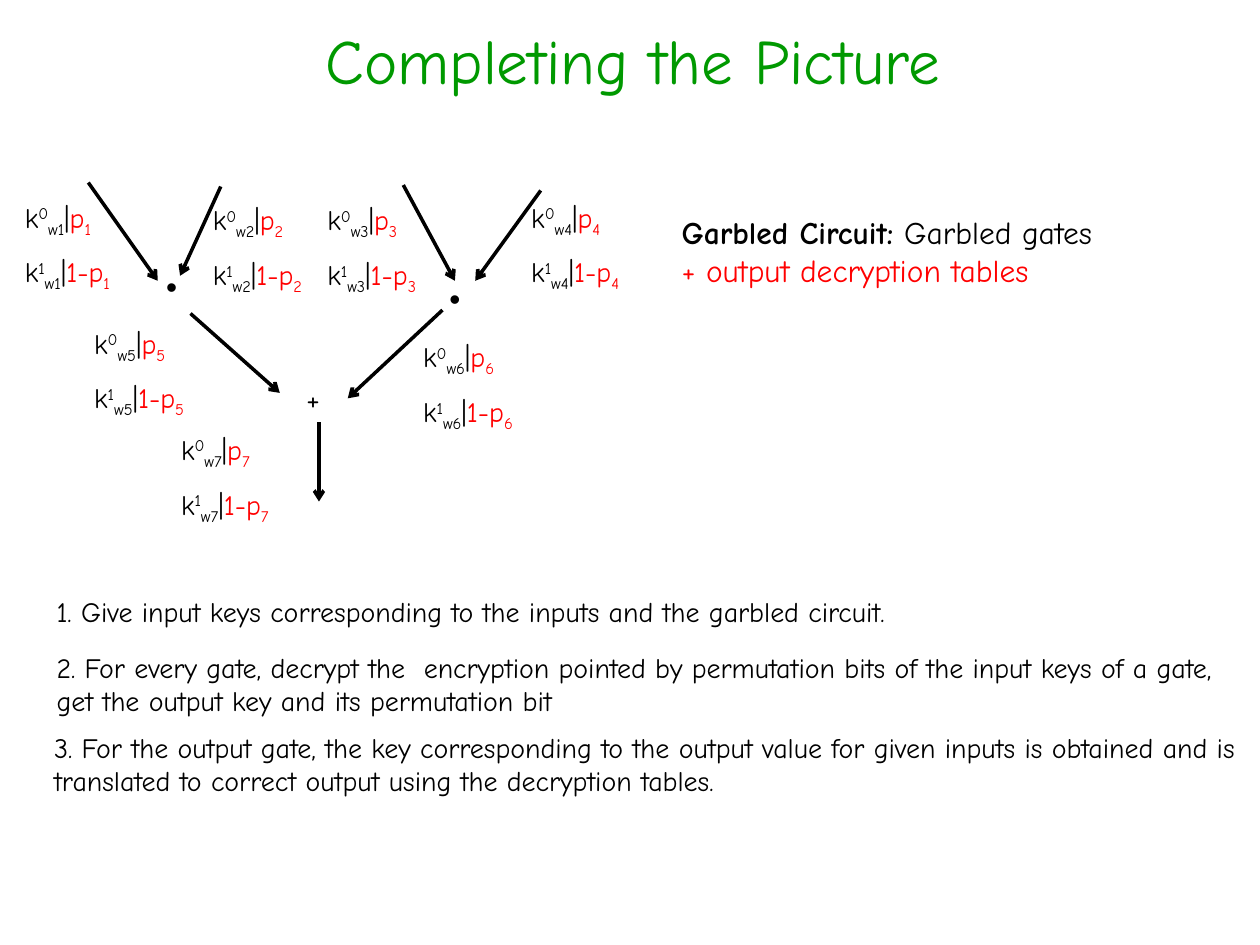
from dataclasses import dataclass

from lxml.etree import SubElement
from pptx import Presentation
from pptx.dml.color import RGBColor
from pptx.enum.shapes import MSO_CONNECTOR as Connector
from pptx.enum.text import MSO_ANCHOR as Anchor, MSO_AUTO_SIZE as AutoSize, PP_ALIGN as Align
from pptx.oxml.ns import qn
from pptx.util import Cm, Pt


@dataclass(frozen=True)
class Theme:
    font: str = "Comic Neue"
    dot_font: str = "Arial"
    title_color: RGBColor = RGBColor(0x00, 0x99, 0x00)
    ink: RGBColor = RGBColor(0x00, 0x00, 0x00)
    accent: RGBColor = RGBColor(0xFF, 0x00, 0x00)
    title_size: Pt = Pt(36)
    label_size: Pt = Pt(18)
    body_size: Pt = Pt(16)
    key_gap: Pt = Pt(9.5)
    line_width: Pt = Pt(2)
    raised: int = 30000
    lowered: int = -25000


class CircuitSlide:
    def __init__(self, page, theme):
        self.page = page
        self.theme = theme

    def style(self, span, size, color=None, bold=False, font=None, baseline=0):
        span.font.name = font or self.theme.font
        span.font.size = size
        span.font.bold = bold
        span.font.color.rgb = color or self.theme.ink
        if baseline:
            span.font._element.set("baseline", str(baseline))

    def add_span(self, para, text, size, **look):
        span = para.add_run()
        span.text = text
        self.style(span, size, **look)

    def title(self, text, left, top, width, height):
        box = self.page.shapes.title
        box.left, box.top, box.width, box.height = Cm(left), Cm(top), Cm(width), Cm(height)
        frame = box.text_frame
        frame.text = text
        frame.vertical_anchor = Anchor.TOP
        para = frame.paragraphs[0]
        para.alignment = Align.CENTER
        self.style(para.runs[0], self.theme.title_size, self.theme.title_color)

    def text_box(self, left, top, width, height, wrap=True):
        box = self.page.shapes.add_textbox(Cm(left), Cm(top), Cm(width), Cm(height))
        box.text_frame.word_wrap = wrap
        box.text_frame.auto_size = AutoSize.SHAPE_TO_FIT_TEXT
        return box.text_frame

    def text(self, text, left, top, width, height, size, font=None, wrap=True):
        frame = self.text_box(left, top, width, height, wrap)
        frame.text = text
        self.style(frame.paragraphs[0].runs[0], size, font=font)

    def summary(self, heading, rest, addition, left, top, width, height):
        frame = self.text_box(left, top, width, height)
        size = self.theme.label_size
        para = frame.paragraphs[0]
        self.add_span(para, heading, size, bold=True)
        self.add_span(para, rest, size)
        para = frame.add_paragraph()
        self.add_span(para, addition, size, color=self.theme.accent)

    def wire_keys(self, wire, left, top):
        theme = self.theme
        frame = self.text_box(left, top, 3.02, 1.96)
        first = frame.paragraphs[0]
        second = frame.add_paragraph()
        second.space_before = theme.key_gap
        for para, bit, pointer in ((first, "0", "p"), (second, "1", "1-p")):
            for text, color, baseline in (
                ("k", theme.ink, 0),
                (bit, theme.ink, theme.raised),
                (f"w{wire}", theme.ink, theme.lowered),
                ("|", theme.ink, 0),
                (pointer, theme.accent, 0),
                (str(wire), theme.accent, theme.lowered),
            ):
                self.add_span(para, text, theme.body_size, color=color, baseline=baseline)

    def arrow(self, start, end):
        ends = [Cm(value) for value in (*start, *end)]
        wire = self.page.shapes.add_connector(Connector.STRAIGHT, *ends)
        wire.line.color.rgb = self.theme.ink
        wire.line.width = self.theme.line_width
        SubElement(wire.line._get_or_add_ln(), qn("a:tailEnd"), type="arrow")
        SubElement(wire._element.spPr, qn("a:effectLst"))


STEPS = (
    ("1. Give input keys corresponding to the inputs and the garbled circuit.", 0.89, 11.86, 0.94),
    ("2. For every gate, decrypt the  encryption pointed by permutation bits of the input keys "
     "of a gate, get the output key and its permutation bit", 0.89, 12.98, 1.63),
    ("3. For the output gate, the key corresponding to the output value for given inputs is "
     "obtained and is translated to correct output using the decryption tables.", 0.84, 14.6, 1.63),
)
WIRES = (
    ((1.78, 3.68), (3.18, 5.66)),
    ((4.45, 3.76), (3.63, 5.56)),
    ((8.13, 3.73), (9.17, 5.66)),
    ((10.9, 3.84), (9.58, 5.66)),
    ((3.84, 6.32), (5.64, 7.92)),
    ((8.92, 6.25), (7.01, 8.03)),
    ((6.43, 8.51), (6.43, 10.11)),
)
KEY_PLACES = (
    (0.25, 3.91), (4.04, 3.96), (6.35, 3.96), (10.46, 3.91),
    (1.65, 6.45), (8.28, 6.73), (3.4, 8.59),
)


def main():
    deck = Presentation()
    deck.slide_width, deck.slide_height = Cm(25.4), Cm(19.05)
    theme = Theme()
    slide = CircuitSlide(deck.slides.add_slide(deck.slide_layouts[5]), theme)

    slide.title("Completing the Picture", 0.51, 0.3, 24.49, 2.97)
    slide.summary("Garbled Circuit:", " Garbled gates", "+ output decryption tables",
                  13.49, 4.17, 11.46, 1.8)
    for text, left, top, height in STEPS:
        slide.text(text, left, top, 24.43, height, theme.body_size)
    for start, end in WIRES:
        slide.arrow(start, end)
    slide.text("+", 5.92, 7.52, 0.91, 1.02, theme.label_size, wrap=False)
    for left, top, width in ((8.81, 5.51, 0.76), (3.1, 5.26, 0.89)):
        slide.text("•", left, top, width, 1.02, theme.label_size, font=theme.dot_font)
    for wire, (left, top) in enumerate(KEY_PLACES, start=1):
        slide.wire_keys(wire, left, top)

    deck.save("out.pptx")


if __name__ == "__main__":
    main()
